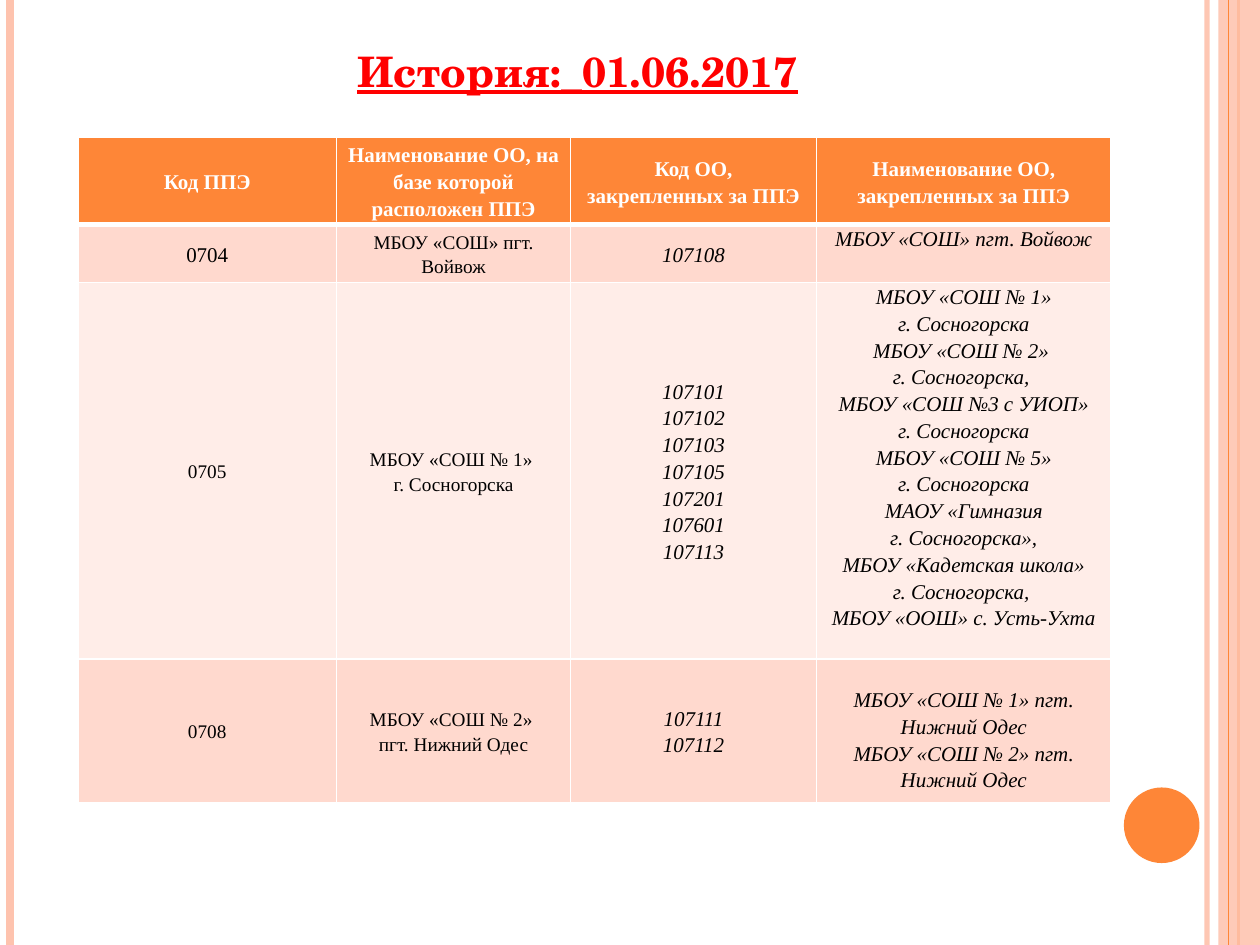
"""Build the slide that lists history exam points and their assigned schools."""
from dataclasses import dataclass

import lxml.etree
import pptx
import pptx.dml.color
import pptx.enum.shapes
import pptx.enum.text
import pptx.oxml
import pptx.oxml.ns
import pptx.util

Inches = pptx.util.Inches
Pt = pptx.util.Pt
RGBColor = pptx.dml.color.RGBColor
Shapes = pptx.enum.shapes.MSO_SHAPE
Anchor = pptx.enum.text.MSO_ANCHOR
qn = pptx.oxml.ns.qn

ORANGE = RGBColor(0xFE, 0x86, 0x37)
PEACH = RGBColor(0xFE, 0xC3, 0xAE)
BAND_DARK = RGBColor(0xFF, 0xD9, 0xCE)
BAND_LIGHT = RGBColor(0xFF, 0xED, 0xE8)
WHITE = RGBColor(0xFF, 0xFF, 0xFF)
BLACK = RGBColor(0, 0, 0)
RED = RGBColor(0xFF, 0, 0)

TITLE_FONT = "TeX Gyre Schola"
TABLE_FONT = "Times New Roman"
COLUMN_WIDTHS = (2.05, 1.86, 1.95, 2.34)
ROW_HEIGHTS = (0.69, 0.46, 2.52, 1.14)


@dataclass(frozen=True)
class Stripe:
    x: float
    width: float
    color: RGBColor
    opacity: int = 100


@dataclass(frozen=True)
class Entry:
    text: str
    size: float = 12
    italic: bool = False
    anchor: Anchor = Anchor.MIDDLE
    top_margin: float = 0


def schools(text: str, top_margin: float = 0) -> Entry:
    return Entry(text, italic=True, anchor=Anchor.TOP, top_margin=top_margin)


LEFT_STRIPES = (
    Stripe(9.58, 3, PEACH, 93),
    Stripe(0.08, 4.5, PEACH),
    Stripe(9.83, 1.5, ORANGE),
)
INNER_STRIPE = Stripe(9.75, 0.75, ORANGE)

HEADERS = (
    Entry("Код ППЭ"),
    Entry("Наименование ОО, на базе которой расположен ППЭ"),
    Entry("Код ОО,\nзакрепленных за ППЭ"),
    Entry("Наименование ОО, закрепленных за ППЭ"),
)
EXAM_POINTS = (
    (
        Entry("0704"),
        Entry("МБОУ «СОШ» пгт. Войвож", 11),
        Entry("107108", italic=True),
        schools("МБОУ «СОШ» пгт. Войвож"),
    ),
    (
        Entry("0705", 11),
        Entry("МБОУ «СОШ № 1» \nг. Сосногорска", 11),
        Entry("107101\n107102\n107103\n107105\n107201\n107601\n107113", italic=True),
        schools(
            "МБОУ «СОШ № 1»\nг. Сосногорска\n"
            "МБОУ «СОШ № 2» \nг. Сосногорска, \n"
            "МБОУ «СОШ №3 с УИОП»\nг. Сосногорска\n"
            "МБОУ «СОШ № 5»\nг. Сосногорска\n"
            "МАОУ «Гимназия\nг. Сосногорска»,\n"
            "МБОУ «Кадетская школа»\nг. Сосногорска, \n"
            "МБОУ «ООШ» с. Усть-Ухта"
        ),
    ),
    (
        Entry("0708", 11),
        Entry("МБОУ «СОШ № 2» \nпгт. Нижний Одес", 11),
        Entry("107111\n107112", italic=True),
        schools("МБОУ «СОШ № 1» пгт. Нижний Одес\nМБОУ «СОШ № 2» пгт. Нижний Одес", 0.21),
    ),
)


def set_opacity(properties, percent: int) -> None:
    color = next(properties.iter(qn("a:srgbClr")))
    lxml.etree.SubElement(color, qn("a:alpha"), val=str(percent * 1000))


def write_text(frame, text: str, *, font: str, size: float, color: RGBColor,
               bold: bool = False, italic: bool = False, underline: bool = False,
               line_spacing: float = 1.0, space_before: float = 0) -> None:
    frame.word_wrap = True
    for index, line in enumerate(text.split("\n")):
        para = frame.add_paragraph() if index else frame.paragraphs[0]
        para.alignment = pptx.enum.text.PP_ALIGN.CENTER
        para.line_spacing = line_spacing
        para.space_before = Pt(space_before)
        span = para.add_run()
        span.text = line
        span.font.name = font
        span.font.size = Pt(size)
        span.font.color.rgb = color
        span.font.bold = bold
        span.font.italic = italic
        span.font.underline = underline


def draw_stripe(page, stripe: Stripe) -> None:
    line = page.shapes.add_connector(
        pptx.enum.shapes.MSO_CONNECTOR.STRAIGHT,
        Inches(stripe.x), Inches(0), Inches(stripe.x), Inches(7.5))
    line.line.color.rgb = stripe.color
    line.line.width = Pt(stripe.width)
    properties = line._element.spPr
    if stripe.opacity < 100:
        set_opacity(properties, stripe.opacity)
    lxml.etree.SubElement(properties, qn("a:effectLst"))


def draw_shape(page, kind: Shapes, left: float, top: float, width: float,
               height: float, color: RGBColor, opacity: int = 100) -> None:
    shape = page.shapes.add_shape(
        kind, Inches(left), Inches(top), Inches(width), Inches(height))
    shape.shadow.inherit = False
    shape.fill.solid()
    shape.fill.fore_color.rgb = color
    shape.line.fill.background()
    if opacity < 100:
        set_opacity(shape._element.spPr, opacity)


def set_borders(cell, bottom_width: float) -> None:
    properties = cell._tc.get_or_add_tcPr()
    widths = {"lnL": 1, "lnR": 1, "lnT": 1, "lnB": bottom_width}
    for index, (side, width) in enumerate(widths.items()):
        border = lxml.etree.Element(qn(f"a:{side}"), w=str(int(Pt(width))))
        fill = lxml.etree.SubElement(border, qn("a:solidFill"))
        lxml.etree.SubElement(fill, qn("a:srgbClr"), val=str(WHITE))
        properties.insert(index, border)


def fill_cell(cell, entry: Entry, fill: RGBColor, header: bool) -> None:
    cell.margin_left = cell.margin_right = Inches(0.07)
    cell.margin_top = Inches(entry.top_margin)
    cell.margin_bottom = Inches(0)
    cell.vertical_anchor = entry.anchor
    cell.fill.solid()
    cell.fill.fore_color.rgb = fill
    set_borders(cell, 3 if header else 1)
    write_text(cell.text_frame, entry.text, font=TABLE_FONT, size=entry.size,
               color=WHITE if header else BLACK, bold=header,
               italic=entry.italic, line_spacing=1.15)


def draw_table(page) -> None:
    table = page.shapes.add_table(
        len(ROW_HEIGHTS), len(COLUMN_WIDTHS), Inches(0.62), Inches(1.09),
        Inches(sum(COLUMN_WIDTHS)), Inches(sum(ROW_HEIGHTS))).table
    for column, width in zip(table.columns, COLUMN_WIDTHS):
        column.width = Inches(width)
    fills = (ORANGE, BAND_DARK, BAND_LIGHT, BAND_DARK)
    for index, entries in enumerate((HEADERS, *EXAM_POINTS)):
        table.rows[index].height = Inches(ROW_HEIGHTS[index])
        for cell, entry in zip(table.rows[index].cells, entries):
            fill_cell(cell, entry, fills[index], header=index == 0)


def main() -> None:
    deck = pptx.Presentation()
    deck.slide_width, deck.slide_height = Inches(10), Inches(7.5)
    page = deck.slides.add_slide(deck.slide_layouts[6])
    for stripe in LEFT_STRIPES:
        draw_stripe(page, stripe)
    draw_shape(page, Shapes.RECTANGLE, 9.67, 0, 0.33, 7.5, PEACH, 87)
    draw_stripe(page, INNER_STRIPE)
    draw_shape(page, Shapes.OVAL, 8.92, 6.25, 0.6, 0.6, ORANGE)
    box = page.shapes.add_textbox(Inches(0.5), Inches(0.31), Inches(8.17), Inches(6.77))
    write_text(box.text_frame, "История:_01.06.2017", font=TITLE_FONT, size=24,
               color=RED, bold=True, underline=True, space_before=6)
    draw_table(page)
    deck.save("out.pptx")


if __name__ == "__main__":
    main()
